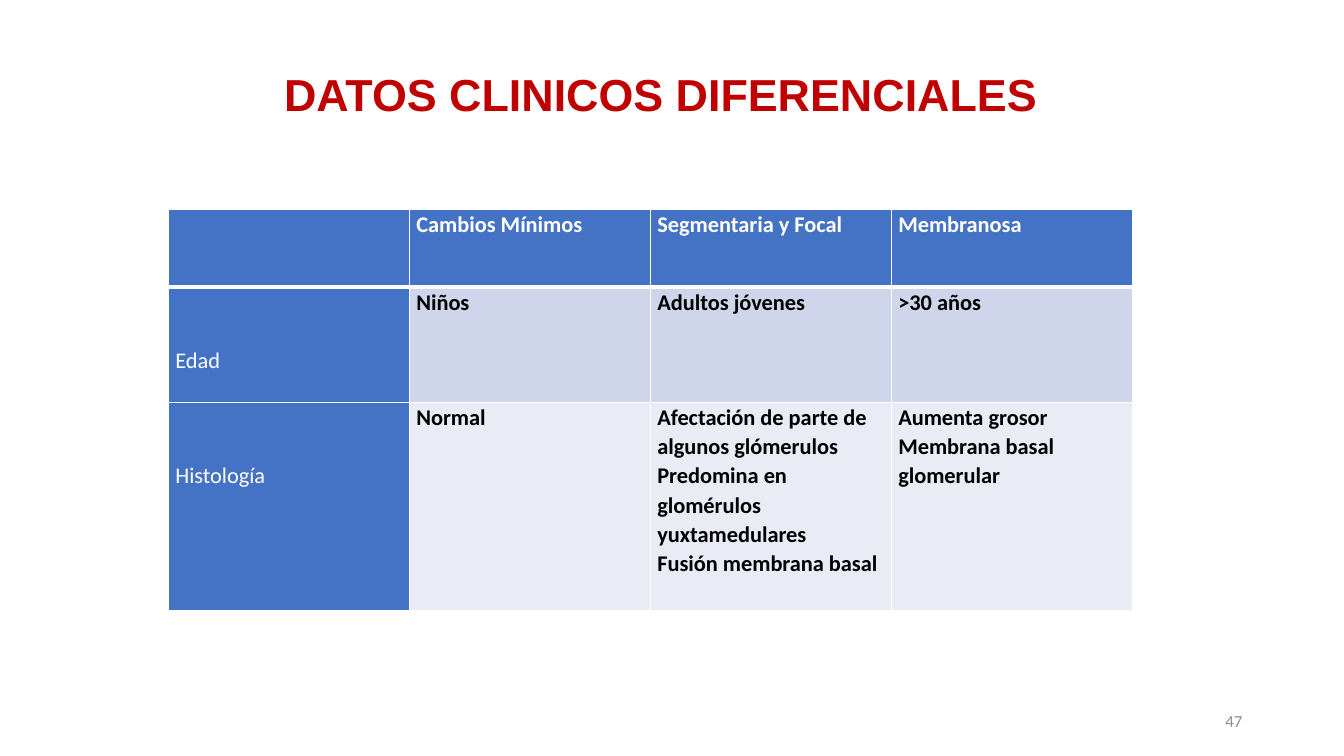
import pptx
import pptx.util
import pptx.dml.color
import pptx.enum.text
import pptx.oxml
import pptx.oxml.ns

Inches, Pt = pptx.util.Inches, pptx.util.Pt
ALIGN, ANCHOR = pptx.enum.text.PP_ALIGN, pptx.enum.text.MSO_ANCHOR

# Content
TITLE = "DATOS CLINICOS DIFERENCIALES"
PAGE = "47"
ROWS = [
    [[], ["Cambios Mínimos"], ["Segmentaria y Focal"], ["Membranosa"]],
    [["Edad"], ["Niños"], ["Adultos jóvenes"], [">30 años"]],
    [["Histología"], ["Normal"],
     ["Afectación de parte de algunos glómerulos",
      "Predomina en glomérulos yuxtamedulares",
      "Fusión membrana basal"],
     ["Aumenta grosor Membrana basal glomerular"]],
]

# Layout and formats
TABLE_LEFT, TABLE_TOP, COL_WIDTH = 1.67, 2.08, 2.39
ROW_HEIGHTS = [0.77, 1.14, 2.07]
HEAD_FILL, BODY_FILLS = "4472C4", ["CFD5EA", "E9EBF5"]
LABEL_TOP = 0.58
TITLE_FONT = {"name": "Arial", "size": Pt(32), "bold": True}
CELL_FONT = {"name": "Calibri", "size": Pt(16)}
PAGE_FONT = {"name": "Calibri", "size": Pt(12)}


def rgb(color):
    return pptx.dml.color.RGBColor.from_string(color)


def set_attrs(obj, values):
    for name, value in values.items():
        setattr(obj, name, value)


def add_text(p, text, font, color):
    r = p.add_run()
    r.text = text
    set_attrs(r.font, font)
    r.font.color.rgb = rgb(color)


def set_borders(cell, widths):
    tc_pr = cell._tc.get_or_add_tcPr()
    for i, (side, width) in enumerate(widths.items()):
        tc_pr.insert(i, pptx.oxml.parse_xml(
            f'<a:ln{side} {pptx.oxml.ns.nsdecls("a")} w="{Pt(width)}">'
            '<a:solidFill><a:srgbClr val="FFFFFF"/></a:solidFill>'
            f'</a:ln{side}>'))


prs = pptx.Presentation()
set_attrs(prs, {"slide_width": Inches(13.33), "slide_height": Inches(7.5)})
s = prs.slides.add_slide(prs.slide_layouts[5])

# Title
title = s.shapes.title
set_attrs(title, {"left": Inches(2.7), "top": Inches(0.61),
                  "width": Inches(7.71), "height": Inches(0.63)})
tf = title.text_frame
set_attrs(tf, {"word_wrap": False, "vertical_anchor": ANCHOR.MIDDLE})
p = tf.paragraphs[0]
p.alignment = ALIGN.CENTER
add_text(p, TITLE, TITLE_FONT, "C00000")

# Comparison table
table = s.shapes.add_table(
    len(ROWS), len(ROWS[0]), Inches(TABLE_LEFT), Inches(TABLE_TOP),
    Inches(COL_WIDTH * len(ROWS[0])), Inches(sum(ROW_HEIGHTS))).table
for col in table.columns:
    col.width = Inches(COL_WIDTH)
for i, row in enumerate(ROWS):
    table.rows[i].height = Inches(ROW_HEIGHTS[i])
    for j, lines in enumerate(row):
        cell = table.cell(i, j)
        is_head, is_label = i == 0, i > 0 and j == 0
        blue = is_head or is_label
        set_attrs(cell, {"margin_left": Inches(0.07), "margin_right": Inches(0.07),
                         "margin_top": Inches(LABEL_TOP if is_label else 0),
                         "margin_bottom": 0, "vertical_anchor": ANCHOR.TOP})
        cell.fill.solid()
        cell.fill.fore_color.rgb = rgb(HEAD_FILL if blue else BODY_FILLS[i - 1])
        set_borders(cell, {"L": 1, "R": 1, "T": 1, "B": 3 if is_head else 1})
        tf = cell.text_frame
        for k, line in enumerate(lines):
            p = tf.add_paragraph() if k else tf.paragraphs[0]
            p.line_spacing = 1.07
            add_text(p, line, {**CELL_FONT, "bold": not is_label},
                     "FFFFFF" if blue else "000000")

# Page number
tf = s.shapes.add_textbox(Inches(9.42), Inches(6.95), Inches(3), Inches(0.4)).text_frame
set_attrs(tf, {"word_wrap": True, "vertical_anchor": ANCHOR.MIDDLE})
p = tf.paragraphs[0]
p.alignment = ALIGN.RIGHT
add_text(p, PAGE, PAGE_FONT, "8C8C8C")

prs.save("out.pptx")
